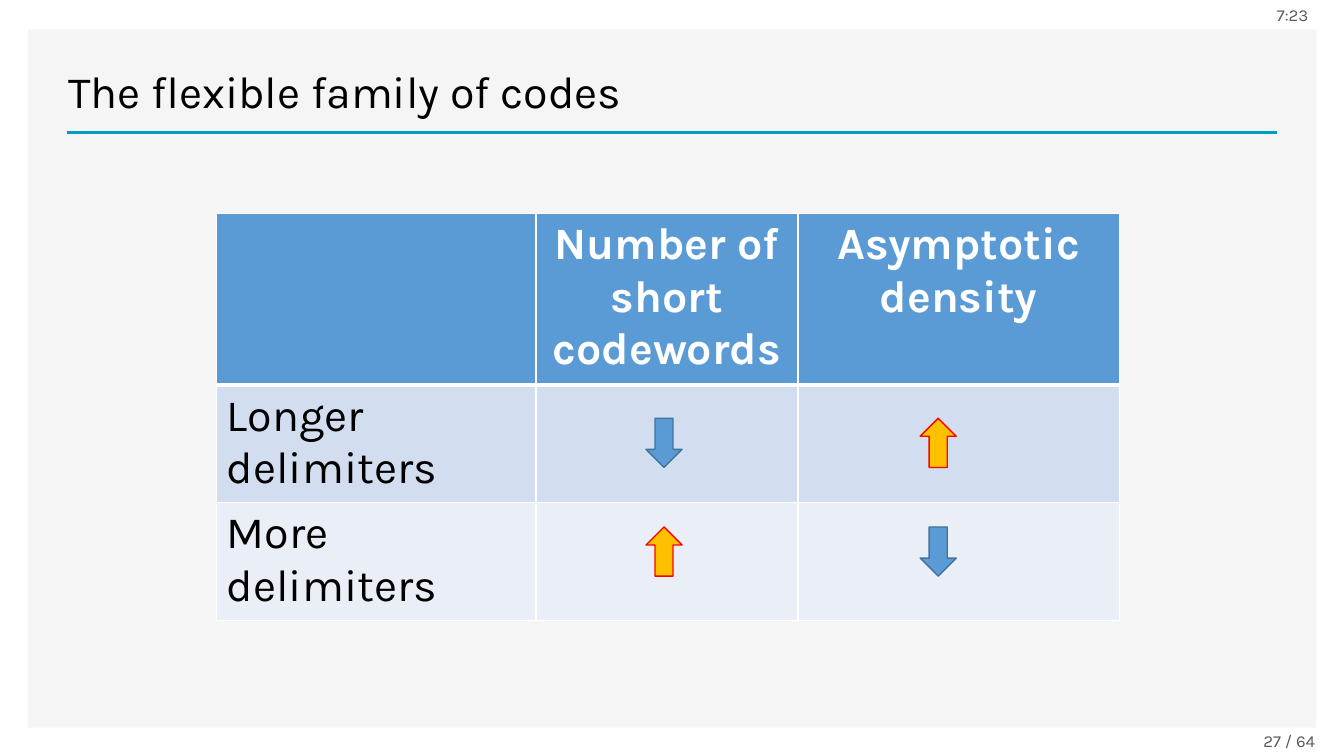
from dataclasses import dataclass

import pptx
import pptx.dml.color
import pptx.enum.shapes
import pptx.enum.text
import pptx.oxml
import pptx.oxml.ns
import pptx.util
from pptx.util import Cm

ALIGN = pptx.enum.text.PP_ALIGN
ANCHOR = pptx.enum.text.MSO_ANCHOR
SHAPE = pptx.enum.shapes.MSO_SHAPE
NAMESPACE = pptx.oxml.ns.nsdecls("a")


@dataclass(frozen=True)
class Theme:
    font: str = "Karla"
    large: int = 32
    small: int = 12
    text: str = "000000"
    muted: str = "595959"
    white: str = "FFFFFF"
    panel: str = "F5F5F5"
    rule: str = "009BC0"
    blue: str = "5B9BD5"
    blue_line: str = "43739E"
    gold: str = "FFC000"
    red: str = "FF0000"
    bands: tuple = ("D2DEEF", "EAEFF7")


THEME = Theme()

TABLE_ROWS = (
    ("", "Number of short codewords", "Asymptotic density"),
    ("Longer delimiters", "", ""),
    ("More delimiters", "", ""),
)
COLUMN_WIDTHS = (8.05, 6.6, 8.1)
ROW_HEIGHTS = (4.32, 2.96, 2.96)
ARROW_LEFTS = (16.28, 23.19)
ARROW_TOPS = (10.54, 13.28)


def rgb(color):
    return pptx.dml.color.RGBColor.from_string(color)


def add_run(paragraph, text, size, color, bold=False):
    run = paragraph.add_run()
    run.text = text
    run.font.name = THEME.font
    run.font.size = pptx.util.Pt(size)
    run.font.bold = bold
    run.font.color.rgb = rgb(color)
    return run


def add_text(slide, box, text, size, color, align=ALIGN.LEFT):
    shape = slide.shapes.add_textbox(*map(Cm, box))
    frame = shape.text_frame
    frame.word_wrap = True
    frame.vertical_anchor = ANCHOR.MIDDLE
    paragraph = frame.paragraphs[0]
    paragraph.alignment = align
    return add_run(paragraph, text, size, color)


def add_text_shadow(run):
    effects = pptx.oxml.parse_xml(
        f'<a:effectLst {NAMESPACE}>'
        '<a:outerShdw blurRad="38100" dist="38100" dir="2700000" algn="tl">'
        '<a:srgbClr val="000000"><a:alpha val="43000"/></a:srgbClr>'
        '</a:outerShdw></a:effectLst>')
    fill = run.font._element.find(pptx.oxml.ns.qn("a:solidFill"))
    fill.addnext(effects)


def add_filled_shape(slide, kind, box, fill, line=None):
    shape = slide.shapes.add_shape(kind, *map(Cm, box))
    shape.shadow.inherit = False
    shape.fill.solid()
    shape.fill.fore_color.rgb = rgb(fill)
    if line:
        shape.line.color.rgb = rgb(line)
        shape.line.width = pptx.util.Pt(1)
    else:
        shape.line.fill.background()


def add_rule(slide, left, right, top):
    rule = slide.shapes.add_connector(
        pptx.enum.shapes.MSO_CONNECTOR.STRAIGHT,
        Cm(left), Cm(top), Cm(right), Cm(top))
    rule.line.color.rgb = rgb(THEME.rule)
    rule.line.width = pptx.util.Pt(2)
    rule._element.spPr.append(
        pptx.oxml.parse_xml(f"<a:effectLst {NAMESPACE}/>"))


def style_cell(cell, fill, bottom_width):
    """Give the cell white borders and a solid fill."""
    properties = cell._tc.get_or_add_tcPr()
    for side, points in zip("LRTB", (1, 1, 1, bottom_width)):
        properties.append(pptx.oxml.parse_xml(
            f'<a:ln{side} {NAMESPACE} w="{pptx.util.Pt(points)}"><a:solidFill>'
            f'<a:srgbClr val="{THEME.white}"/></a:solidFill></a:ln{side}>'))
    cell.fill.solid()
    cell.fill.fore_color.rgb = rgb(fill)


def add_delimiter_table(slide, left, top):
    table = slide.shapes.add_table(
        len(ROW_HEIGHTS), len(COLUMN_WIDTHS), Cm(left), Cm(top),
        Cm(sum(COLUMN_WIDTHS)), Cm(sum(ROW_HEIGHTS))).table
    for column, width in zip(table.columns, COLUMN_WIDTHS):
        column.width = Cm(width)
    for row, height in zip(table.rows, ROW_HEIGHTS):
        row.height = Cm(height)
    fills = (THEME.blue, *THEME.bands)
    for row_index, texts in enumerate(TABLE_ROWS):
        header = row_index == 0
        for column_index, text in enumerate(texts):
            cell = table.cell(row_index, column_index)
            style_cell(cell, fills[row_index], 3 if header else 1)
            if text:
                paragraph = cell.text_frame.paragraphs[0]
                paragraph.alignment = ALIGN.CENTER if header else ALIGN.LEFT
                add_run(paragraph, text, THEME.large,
                        THEME.white if header else THEME.text, header)


def add_trend_arrows(slide):
    """Place falling arrows on the diagonal and rising ones off it."""
    falling = (SHAPE.DOWN_ARROW, THEME.blue, THEME.blue_line)
    rising = (SHAPE.UP_ARROW, THEME.gold, THEME.red)
    for row, top in enumerate(ARROW_TOPS):
        for column, left in enumerate(ARROW_LEFTS):
            kind, fill, line = falling if row == column else rising
            add_filled_shape(slide, kind, (left, top, 0.91, 1.24), fill, line)


def main():
    presentation = pptx.Presentation()
    presentation.slide_width = Cm(33.87)
    presentation.slide_height = Cm(19.05)
    slide = presentation.slides.add_slide(presentation.slide_layouts[6])

    add_filled_shape(slide, SHAPE.RECTANGLE, (0.71, 0.74, 32.46, 17.6),
                     THEME.panel)
    add_rule(slide, 1.68, 32.18, 3.33)
    title = add_text(slide, (1.47, 1.19, 27.99, 2.21),
                     "The flexible family of codes", THEME.large, THEME.text)
    add_text_shadow(title)
    add_delimiter_table(slide, 5.46, 5.38)
    add_trend_arrows(slide)
    add_text(slide, (23.44, 18.29, 9.09, 0.76), "27",
             THEME.small, THEME.muted, ALIGN.RIGHT)
    add_text(slide, (32.13, 18.29, 1.73, 0.76), "/ 64",
             THEME.small, THEME.muted)
    add_text(slide, (31.93, 0, 1.93, 0.76), "7:23", THEME.small, THEME.muted)
    presentation.save("out.pptx")


if __name__ == "__main__":
    main()
